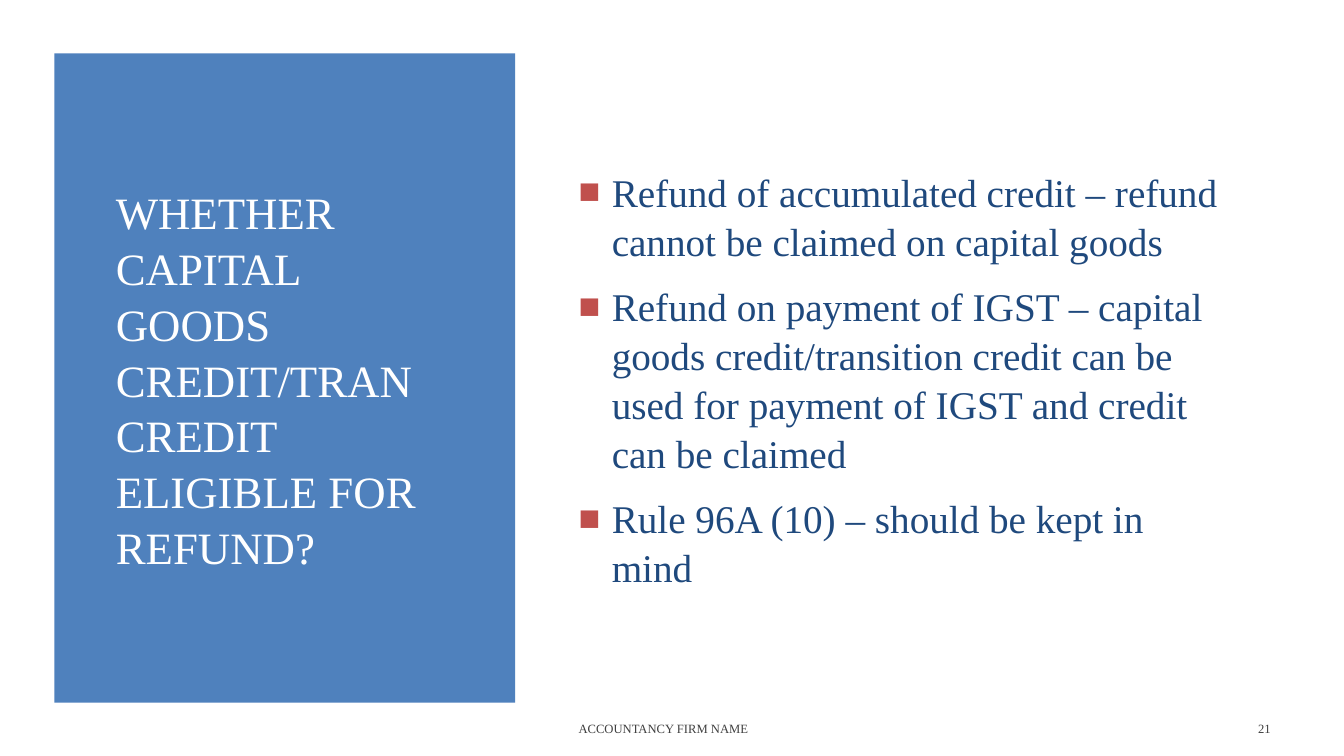
import pptx
import pptx.dml.color
import pptx.enum.shapes
import pptx.enum.text
import pptx.oxml.ns
import pptx.util
from dataclasses import dataclass
from lxml import etree

Align = pptx.enum.text.PP_ALIGN


@dataclass(frozen=True)
class Theme:
    font: str = "Times New Roman"
    paper: str = "FFFFFF"
    panel: str = "4F81BD"
    heading: str = "FFFFFF"
    body: str = "1F497D"
    bullet: str = "C0504D"
    footer: str = "404040"
    heading_size: int = 32
    body_size: int = 28
    footer_size: int = 9
    line_spacing: float = 1.04


def rgb(value):
    return pptx.dml.color.RGBColor.from_string(value)


def write(paragraph, text, *, font, size, color, align=Align.LEFT,
          spacing=1.0, before=0, after=0):
    """Fill one paragraph and format it."""
    paragraph.alignment = align
    paragraph.line_spacing = spacing
    paragraph.space_before = pptx.util.Pt(before)
    paragraph.space_after = pptx.util.Pt(after)
    run = paragraph.add_run()
    run.text = text
    run.font.name = font
    run.font.size = pptx.util.Pt(size)
    run.font.color.rgb = rgb(color)


def add_bullet(paragraph, color, indent=0.33):
    """Hang a square bullet in front of one paragraph."""
    properties = paragraph._p.get_or_add_pPr()
    hang = pptx.util.Inches(indent)
    properties.set("marL", str(hang))
    properties.set("indent", str(-hang))
    qn = pptx.oxml.ns.qn
    bullet_color = etree.SubElement(properties, qn("a:buClr"))
    etree.SubElement(bullet_color, qn("a:srgbClr"), val=color)
    etree.SubElement(properties, qn("a:buSzPct"), val="92000")
    etree.SubElement(properties, qn("a:buFont"), typeface="Arial")
    etree.SubElement(properties, qn("a:buChar"), char="■")


class SlideBuilder:
    """Places elements by percentages of the slide's width and height."""

    def __init__(self, deck, theme):
        self.deck = deck
        self.theme = theme
        self.slide = deck.slides.add_slide(deck.slide_layouts[6])
        background = self.slide.background.fill
        background.solid()
        background.fore_color.rgb = rgb(theme.paper)

    def place(self, left, top, width, height):
        across = self.deck.slide_width / 100
        down = self.deck.slide_height / 100
        return (round(left * across), round(top * down),
                round(width * across), round(height * down))

    def panel(self, *area):
        block = self.slide.shapes.add_shape(
            pptx.enum.shapes.MSO_SHAPE.RECTANGLE, *self.place(*area))
        block.shadow.inherit = False
        block.fill.solid()
        block.fill.fore_color.rgb = rgb(self.theme.panel)
        block.line.fill.background()

    def text(self, area, lines, bulleted=False, **style):
        frame = self.slide.shapes.add_textbox(*self.place(*area)).text_frame
        frame.word_wrap = True
        frame.vertical_anchor = pptx.enum.text.MSO_ANCHOR.MIDDLE
        for number, line in enumerate(lines):
            paragraph = frame.add_paragraph() if number else frame.paragraphs[0]
            write(paragraph, line, font=self.theme.font, **style)
            if bulleted:
                add_bullet(paragraph, self.theme.bullet)

    def heading(self, area, question):
        self.text(area, [question], size=self.theme.heading_size,
                  color=self.theme.heading, spacing=self.theme.line_spacing)

    def bullets(self, area, points):
        size = self.theme.body_size
        self.text(area, points, bulleted=True, size=size, color=self.theme.body,
                  spacing=self.theme.line_spacing, before=0.2 * size, after=6)

    def footer(self, area, label, align=Align.LEFT):
        self.text(area, [label], size=self.theme.footer_size,
                  color=self.theme.footer, align=align)


def main():
    deck = pptx.Presentation()
    deck.slide_width = pptx.util.Inches(13.33)
    deck.slide_height = pptx.util.Inches(7.5)
    builder = SlideBuilder(deck, Theme())

    # Shared positions, in percent of the slide
    content_top, content_height = 16.27, 67.47
    body_left = 42.31
    footer_top, footer_height = 93.65, 5.33

    # Question on the coloured panel
    builder.panel(4.05, 7.07, 34.28, 85.87)
    builder.heading(
        (7.88, content_top, 26.86, content_height),
        "WHETHER CAPITAL GOODS CREDIT/TRAN CREDIT ELIGIBLE FOR REFUND?")

    # Answers
    builder.bullets((body_left, content_top, 50.11, content_height), [
        "Refund of accumulated credit – refund cannot be claimed on capital goods",
        "Refund on payment of IGST – capital goods credit/transition credit can be "
        "used for payment of IGST and credit can be claimed",
        "Rule 96A (10) – should be kept in mind",
    ])

    # Firm and page number
    builder.footer((body_left, footer_top, 40.06, footer_height),
                   "ACCOUNTANCY FIRM NAME")
    builder.footer((86.65, footer_top, 8.63, footer_height), "21", Align.RIGHT)

    deck.save("out.pptx")


if __name__ == "__main__":
    main()
